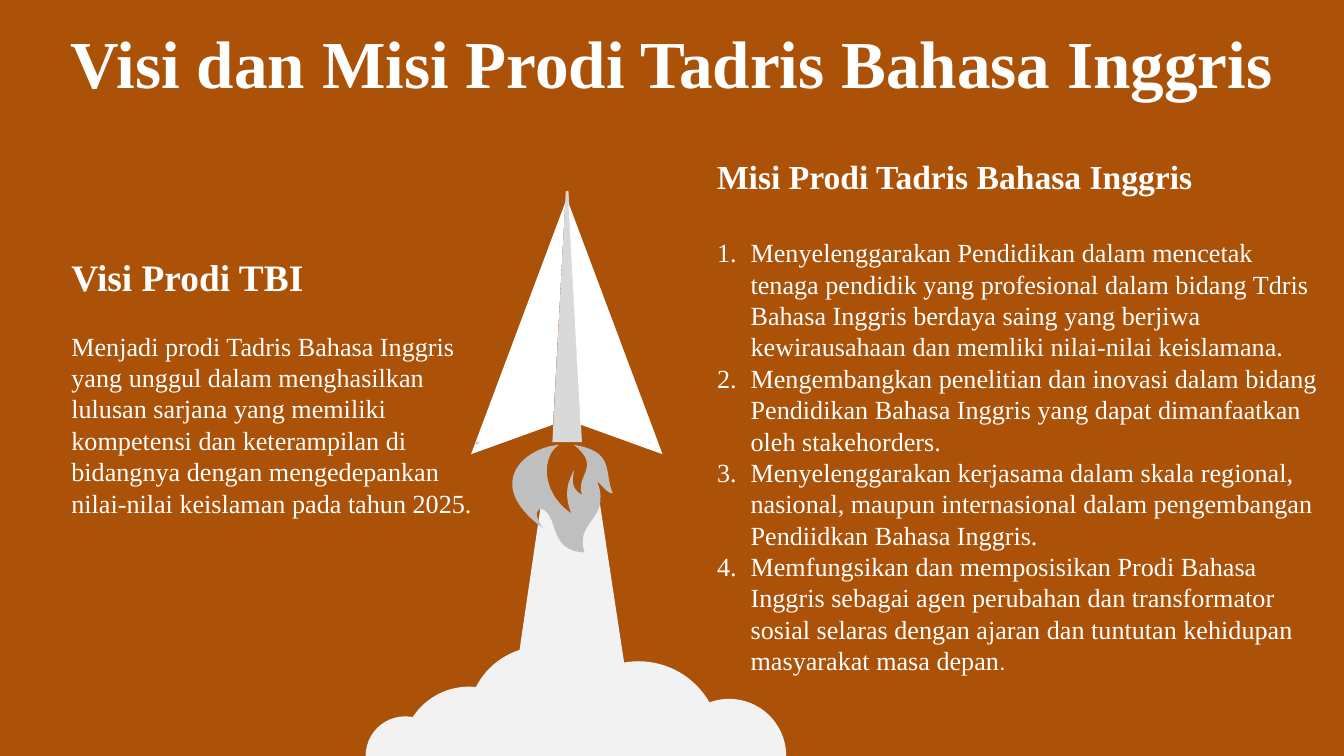
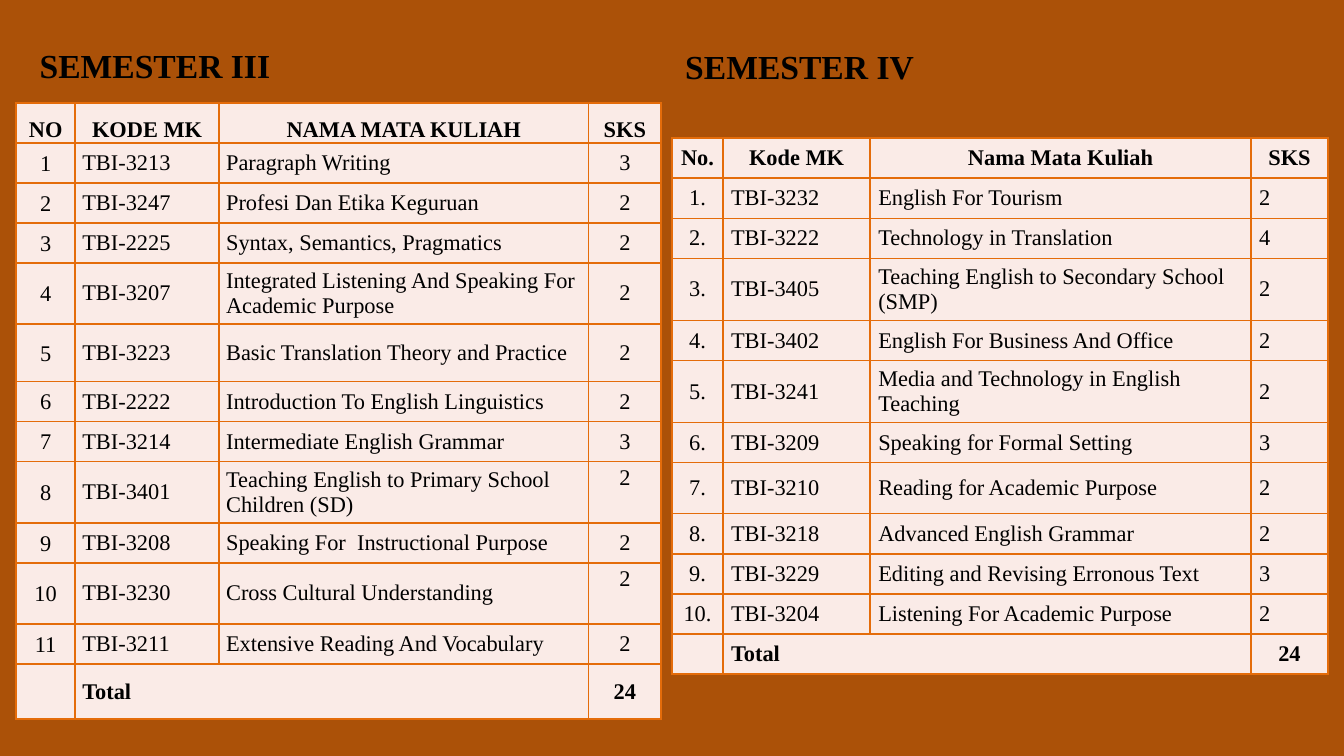
from lxml import etree
from pptx import Presentation
from pptx.dml.color import RGBColor
from pptx.enum.shapes import MSO_SHAPE
from pptx.enum.text import MSO_ANCHOR, MSO_AUTO_SIZE, PP_ALIGN
from pptx.oxml.ns import qn
from pptx.util import Emu, Inches, Pt

CHORD = MSO_SHAPE.CHORD
LEFT, CENTER = PP_ALIGN.LEFT, PP_ALIGN.CENTER
TOP, MIDDLE, BOTTOM = MSO_ANCHOR.TOP, MSO_ANCHOR.MIDDLE, MSO_ANCHOR.BOTTOM
FIXED, GROW = MSO_AUTO_SIZE.NONE, MSO_AUTO_SIZE.SHAPE_TO_FIT_TEXT

RUST = RGBColor(0xAB, 0x51, 0x08)
ORANGE = RGBColor(0xE4, 0x6C, 0x0A)
BLUSH = RGBColor(0xFA, 0xEB, 0xE7)
WHITE = RGBColor(0xFF, 0xFF, 0xFF)
BLACK = RGBColor(0x00, 0x00, 0x00)
SMOKE = RGBColor(0xF2, 0xF2, 0xF2)
FOLD_GREY = RGBColor(0xD9, 0xD9, 0xD9)
FLAME_GREY = RGBColor(0xBF, 0xBF, 0xBF)

SERIF, SANS = "Times New Roman", "Arial"
GRID_COLUMNS = 100  # square cells, so the slide is 56.25 rows high
TITLE_AND_BODY, TITLE_ONLY = 1, 5


def is_curve(step):
    return isinstance(step[0], tuple)


class Deck:
    """Holds the shared style and the slide being drawn."""

    def __init__(self):
        self.prs = Presentation()
        self.prs.slide_width = Inches(10)
        self.prs.slide_height = Emu(self.prs.slide_width * 9 // 16)
        self.cell = self.prs.slide_width / GRID_COLUMNS
        self.slide = None

    def grid(self, *cells):
        return [Emu(round(value * self.cell)) for value in cells]

    def new_slide(self, layout):
        self.slide = self.prs.slides.add_slide(self.prs.slide_layouts[layout])
        fill = self.slide.background.fill
        fill.solid()
        fill.fore_color.rgb = RUST

    def font(self, paragraph, size, color, bold=False):
        font = paragraph.font
        font.name, font.size, font.bold = SERIF, Pt(size), bold
        font.color.rgb = color

    def frame(self, shape, at, anchor, auto_size):
        shape.left, shape.top, shape.width, shape.height = self.grid(*at)
        text = shape.text_frame
        text.word_wrap = True
        text.auto_size = auto_size
        text.vertical_anchor = anchor
        return text

    def title(self, words, at, size, color, align=LEFT, anchor=TOP):
        text = self.frame(self.slide.shapes.title, at, anchor, FIXED)
        text.text = words
        text.paragraphs[0].alignment = align
        self.font(text.paragraphs[0], size, color, True)

    def text_box(self, at, anchor=TOP):
        box = self.slide.shapes.add_textbox(*self.grid(*at))
        return self.frame(box, at, anchor, GROW)

    def heading(self, text, words, size, color):
        paragraph = text.paragraphs[0]
        paragraph.text = words
        self.set_bullet(paragraph, "buNone", 0)
        self.font(paragraph, size, color, True)

    def body(self, text, words, gap=0, numbered=False):
        paragraph = text.add_paragraph()
        paragraph.text = words
        paragraph.space_before = Pt(gap)
        if numbered:
            self.set_bullet(paragraph, "buAutoNum", 2.5, type="arabicPeriod")
        self.font(paragraph, 14, WHITE)
        return paragraph

    def set_bullet(self, paragraph, tag, indent, **attributes):
        properties = paragraph._p.get_or_add_pPr()
        margin, = self.grid(indent)
        properties.set("marL", str(margin))
        properties.set("indent", str(-margin))
        etree.SubElement(properties, qn(f"a:{tag}"), **attributes)

    def paint(self, shape, color):
        shape.shadow.inherit = False
        shape.fill.solid()
        shape.fill.fore_color.rgb = color
        shape.line.fill.background()
        return shape

    def outline(self, color, *contours):
        """Draw contours made of points and (control, control, end) curves."""
        ends = [[self.grid(*(step[2] if is_curve(step) else step)) for step in contour]
                for contour in contours]
        builder = self.slide.shapes.build_freeform(*ends[0][0], scale=1.0)
        for i, points in enumerate(ends):
            if i:
                builder.move_to(*points[0])
            builder.add_line_segments(points[1:], close=True)
        shape = builder.convert_to_shape()
        self.bend(shape, [step for contour in contours for step in contour[1:]])
        return self.paint(shape, color)

    def bend(self, shape, steps):
        segments = list(shape._element.iter(qn("a:lnTo")))
        for segment, step in zip(segments, steps):
            if is_curve(step):
                segment.tag = qn("a:cubicBezTo")
                for i, control in enumerate(step[:2]):
                    x, y = self.grid(*control)
                    point = etree.Element(qn("a:pt"), x=str(x - shape.left), y=str(y - shape.top))
                    segment.insert(i, point)

    def puff(self, x, y, size, start=106.136, end=1.412):
        puff = self.slide.shapes.add_shape(CHORD, *self.grid(x, y, size, size))
        puff.adjustments[0], puff.adjustments[1] = start, end
        return self.paint(puff, SMOKE)

    def group(self, *shapes):
        self.slide.shapes.add_group_shape(shapes)

    def table(self, x, y, widths, heights, rows):
        frame = self.slide.shapes.add_table(
            len(rows), len(widths), *self.grid(x, y, sum(widths), sum(heights)))
        table = frame.table
        table.first_row = table.horz_banding = False
        for column, width in zip(table.columns, self.grid(*widths)):
            column.width = width
        for row, height in zip(table.rows, self.grid(*heights)):
            row.height = height
        last = len(rows) - 1
        for r, row in enumerate(rows):
            for c, words in enumerate(row):
                self.fill_cell(table.cell(r, c), words, r in (0, last))
        table.cell(last, 1).merge(table.cell(last, 2))
        return table

    def fill_cell(self, cell, words, bold):
        cell.fill.solid()
        cell.fill.fore_color.rgb = BLUSH
        cell.vertical_anchor = MIDDLE
        paragraph = cell.text_frame.paragraphs[0]
        paragraph.text = words
        self.font(paragraph, 12, BLACK, bold)
        if not words:
            paragraph._p.get_or_add_endParaRPr().set("sz", "1200")
        properties = cell._tc.get_or_add_tcPr()
        for i, side in enumerate(("lnL", "lnR", "lnT", "lnB")):
            line = etree.Element(qn(f"a:{side}"), w=str(Pt(1)))
            solid = etree.SubElement(line, qn("a:solidFill"))
            etree.SubElement(solid, qn("a:srgbClr"), val=str(ORANGE))
            properties.insert(i, line)

    def insets(self, cell, side, top, bottom):
        (cell.margin_left, cell.margin_right,
         cell.margin_top, cell.margin_bottom) = self.grid(side, side, top, bottom)


def course_rows(header, courses, mark):
    numbered = [(f"{n}{mark}", *course) for n, course in enumerate(courses, 1)]
    return [header, *numbered, ("", "Total", "", "24")]


def row_heights(count, usual, taller):
    return [taller.get(r, usual) for r in range(count)]


MISSIONS = [
    "Menyelenggarakan Pendidikan dalam mencetak tenaga pendidik yang profesional dalam bidang "
    "Tdris Bahasa Inggris berdaya saing yang berjiwa kewirausahaan dan memliki nilai-nilai keislamana.",
    "Mengembangkan penelitian dan inovasi dalam bidang Pendidikan Bahasa Inggris yang dapat "
    "dimanfaatkan oleh stakehorders.",
    "Menyelenggarakan kerjasama dalam skala regional, nasional, maupun internasional dalam "
    "pengembangan Pendiidkan Bahasa Inggris.",
    "Memfungsikan dan memposisikan Prodi Bahasa Inggris sebagai agen perubahan dan transformator "
    "sosial selaras dengan ajaran dan tuntutan kehidupan masyarakat masa depan",
]
SEMESTER_3 = [
    ("TBI-3213", "Paragraph Writing", "3"),
    ("TBI-3247", "Profesi Dan Etika Keguruan", "2"),
    ("TBI-2225", "Syntax, Semantics, Pragmatics", "2"),
    ("TBI-3207", "Integrated Listening And Speaking For Academic Purpose", "2"),
    ("TBI-3223", "Basic Translation Theory and Practice", "2"),
    ("TBI-2222", "Introduction To English Linguistics", "2"),
    ("TBI-3214", "Intermediate English Grammar", "3"),
    ("TBI-3401", "Teaching English to Primary School Children (SD)", "2"),
    ("TBI-3208", "Speaking For  Instructional Purpose", "2"),
    ("TBI-3230", "Cross Cultural Understanding", "2"),
    ("TBI-3211", "Extensive Reading And Vocabulary", "2"),
]
SEMESTER_4 = [
    ("TBI-3232", "English For Tourism", "2"),
    ("TBI-3222", "Technology in Translation", "4"),
    ("TBI-3405", "Teaching English to Secondary School (SMP)", "2"),
    ("TBI-3402", "English For Business And Office", "2"),
    ("TBI-3241", "Media and Technology in English Teaching", "2"),
    ("TBI-3209", "Speaking for Formal Setting", "3"),
    ("TBI-3210", "Reading for Academic Purpose", "2"),
    ("TBI-3218", "Advanced English Grammar", "2"),
    ("TBI-3229", "Editing and Revising Erronous Text", "3"),
    ("TBI-3204", "Listening For Academic Purpose", "2"),
]
PLUME = [(37.5, 56.25), (40.3, 37.2), ((40.9, 37.2), (42.4, 38.8), (43, 38.8)),
         (44.6, 37.2), (47.5, 56.25)]
FOLD = [(42.1, 14.2), (41.1, 32.9), (43.3, 32.9), ((43, 27.1), (42.6, 20), (42.3, 14.2))]
WING = [(42.3, 15.1), (49.3, 33.8), (43.2, 31.6)]
FLAME = [
    (41.6, 33.1),
    ((40.4, 33.8), (40.1, 36.5), (42.5, 38.2)),
    ((41.9, 36.6), (42.3, 35.8), (42.7, 35)),
    ((42.7, 35.4), (42.3, 36.3), (43.3, 36.8)),
    ((42.8, 35.3), (44.8, 34.8), (42.7, 33.1)),
    ((45.8, 33.6), (44.9, 35.1), (45.6, 36.7)),
    ((45.1, 36.8), (44.3, 35.4), (44.5, 36)),
    ((45.4, 38.7), (42.7, 38.8), (43.5, 41.1)),
    ((40.8, 41), (41.6, 38.5), (40.4, 37.9)),
    ((40, 37.8), (39.6, 38.1), (40.4, 39.3)),
    ((35.9, 36), (39, 33.3), (41.6, 33.1)),
]
SPARKS = [
    [(48.3, 32.9), (48.35, 32.9), (48.3, 33)],
    [(35.4, 32.9), (35.7, 32.9), (35.4, 33.1)],
]


def vision_slide(deck):
    deck.new_slide(TITLE_AND_BODY)

    # Smoke plume and cloud
    deck.group(
        deck.outline(SMOKE, PLUME),
        deck.puff(29.9, 51.1, 10),
        deck.puff(41.4, 49.2, 12.2, 103.423, 6.558),
        deck.puff(34.8, 48.1, 11.1),
        deck.puff(50, 52, 8.5),
        deck.puff(27.2, 53.3, 5.9))

    # Paper plane: fold, mirrored wings, flame
    deck.group(
        deck.outline(FOLD_GREY, FOLD),
        deck.outline(WHITE, WING),
        deck.outline(WHITE, [(84.35 - x, y) for x, y in WING]),
        deck.outline(FLAME_GREY, FLAME, *SPARKS))

    # Title, vision and missions
    deck.title("Visi dan Misi Prodi Tadris Bahasa Inggris",
               (0, 1.4, 100, 6.3), 36, WHITE, CENTER, MIDDLE)

    vision = deck.text_box((4.33, 18.3, 33.3, 20.9), MIDDLE)
    deck.heading(vision, "Visi Prodi TBI", 20, WHITE)
    deck.body(vision, "Menjadi prodi Tadris Bahasa Inggris yang unggul dalam menghasilkan lulusan "
              "sarjana yang memiliki kompetensi dan keterampilan di bidangnya dengan "
              "mengedepankan nilai-nilai keislaman pada tahun 2025.", gap=16.5)

    missions = deck.frame(deck.slide.placeholders[1], (52.35, 10.9, 46.7, 40.1), MIDDLE, GROW)
    deck.heading(missions, "Misi Prodi Tadris Bahasa Inggris", 18, WHITE)
    for i, mission in enumerate(MISSIONS):
        item = deck.body(missions, mission, gap=0 if i else 21.6, numbered=True)
    full_stop = item.add_run()
    full_stop.text = "."
    full_stop.font.name, full_stop.font.size = SANS, Pt(12)


def semester_slide(deck):
    deck.new_slide(TITLE_ONLY)

    # Semester III
    deck.title("SEMESTER III", (1.95, 2.85, 34.6, 4), 18, BLACK)
    rows = course_rows(("NO", "KODE MK", "NAMA MATA KULIAH", "SKS"), SEMESTER_3, "")
    heights = row_heights(len(rows), 2.98, {4: 4.55, 5: 4.3, 8: 4.55, 10: 4.55, 12: 4.1})
    third = deck.table(1.2, 7.65, (4.4, 10.7, 27.5, 5.4), heights, rows)
    for r in range(len(rows)):
        for c in range(4):
            cell = third.cell(r, c)
            tight = r == 0 or c == 0
            deck.insets(cell, *((0.1, 0.1, 0) if tight else (0.53, 0.3, 0.3)))
            if tight or c == 3:
                cell.text_frame.paragraphs[0].alignment = CENTER
            if r == 0:
                cell.vertical_anchor = BOTTOM
    for r in (8, 10):
        third.cell(r, 3).vertical_anchor = TOP

    # Semester IV
    deck.heading(deck.text_box((50, 2.9, 42.5, 4)), "SEMESTER IV", 18, BLACK)
    rows = course_rows(("No.", "Kode MK", "Nama Mata Kuliah", "SKS"), SEMESTER_4, ".")
    heights = row_heights(len(rows), 2.99, {3: 4.6, 5: 4.6, 7: 3.8})
    fourth = deck.table(50, 10.27, (3.8, 10.95, 28.35, 5.7), heights, rows)
    last = len(rows) - 1
    for r in range(len(rows)):
        for c in range(4):
            cell = fourth.cell(r, c)
            deck.insets(cell, 0.6, 0.3, 0.3)
            if r == 0 or c == 0 or (r, c) == (last, 3):
                cell.text_frame.paragraphs[0].alignment = CENTER


def main():
    deck = Deck()
    vision_slide(deck)
    semester_slide(deck)
    deck.prs.save("out.pptx")


if __name__ == "__main__":
    main()
